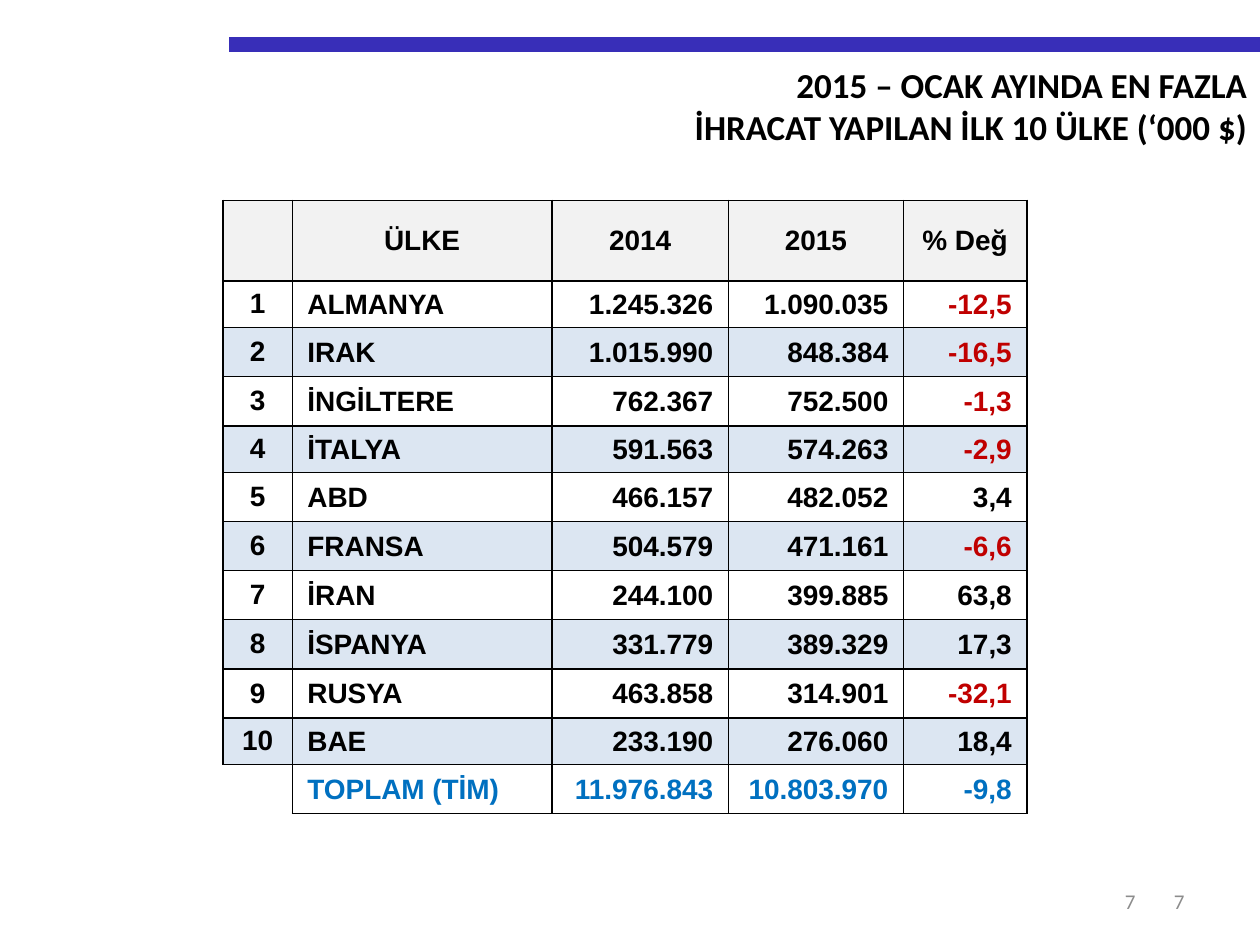
"""Build the slide listing the ten leading export countries."""
from lxml import etree
from pptx import Presentation, util as u
from pptx.dml import color
from pptx.enum import shapes, text
from pptx.oxml import ns

WIDTH, HEIGHT = 10, 7.5
BLACK, RED, BLUE, GREY = "000000", "C00000", "0070C0", "8C8C8C"
HEADER_FILL, BAND_FILL, BAR = "F2F2F2", "DCE6F2", "382EB8"
TITLE = ["2015 – OCAK AYINDA EN FAZLA", "İHRACAT YAPILAN İLK 10 ÜLKE (‘000 $)"]
HEADINGS = ["", "ÜLKE", "2014", "2015", "% Değ"]
COUNTRIES = [
    ("ALMANYA", "1.245.326", "1.090.035", "-12,5"),
    ("IRAK", "1.015.990", "848.384", "-16,5"),
    ("İNGİLTERE", "762.367", "752.500", "-1,3"),
    ("İTALYA", "591.563", "574.263", "-2,9"),
    ("ABD", "466.157", "482.052", "3,4"),
    ("FRANSA", "504.579", "471.161", "-6,6"),
    ("İRAN", "244.100", "399.885", "63,8"),
    ("İSPANYA", "331.779", "389.329", "17,3"),
    ("RUSYA", "463.858", "314.901", "-32,1"),
    ("BAE", "233.190", "276.060", "18,4"),
]
TOTAL = ["", "TOPLAM (TİM)", "11.976.843", "10.803.970", "-9,8"]
COLUMNS = [0.55, 2.06, 1.4, 1.39, 0.98]
HEADER_ROW, ROW, SHORT_ROW = 0.64, 0.39, 0.37
SHORT_ROWS = (1, 4, 10)
CENTRE, LEFT, RIGHT = text.PP_ALIGN.CENTER, text.PP_ALIGN.LEFT, text.PP_ALIGN.RIGHT


def rgb(value):
    """Return the colour for a hex string."""
    return color.RGBColor.from_string(value)


def style(para, name, size, shade, align, bold=False):
    """Set the font and alignment of a paragraph."""
    para.alignment = align
    para.font.name, para.font.size, para.font.bold = name, u.Pt(size), bold
    para.font.color.rgb = rgb(shade)


def add_bar(page, left, top, right):
    """Draw the coloured rule above the title."""
    ends = [u.Inches(value) for value in (left, top, right, top)]
    bar = page.shapes.add_connector(shapes.MSO_CONNECTOR.STRAIGHT, *ends)
    bar.line.color.rgb, bar.line.width = rgb(BAR), u.Pt(8.5)
    etree.SubElement(bar.line._get_or_add_ln().getparent(), ns.qn("a:effectLst"))


def fill_title(page, left, top, width, height):
    """Place the two-line title in its placeholder."""
    title = page.shapes.title
    title.left, title.top = u.Inches(left), u.Inches(top)
    title.width, title.height = u.Inches(width), u.Inches(height)
    frame = title.text_frame
    frame.text = "\n".join(TITLE)
    frame.vertical_anchor = text.MSO_ANCHOR.TOP
    frame.auto_size = text.MSO_AUTO_SIZE.NONE
    for para in frame.paragraphs:
        style(para, "Calibri", 20, BLACK, RIGHT, True)


def add_page_number(page, left, top, width, height):
    """Write the page number at the right of a footer box."""
    box = page.shapes.add_textbox(*map(u.Inches, (left, top, width, height)))
    frame = box.text_frame
    frame.word_wrap, frame.vertical_anchor = True, text.MSO_ANCHOR.MIDDLE
    frame.text = "7"
    style(frame.paragraphs[0], "Calibri", 12, GREY, RIGHT)


def set_borders(cell, visible):
    """Draw the named sides of a cell in black and hide the others."""
    props = cell._tc.get_or_add_tcPr()
    for index, side in enumerate("LRTB"):
        line = etree.Element(ns.qn(f"a:ln{side}"), w=str(u.Pt(1)))
        if side in visible:
            solid = etree.SubElement(line, ns.qn("a:solidFill"))
            etree.SubElement(solid, ns.qn("a:srgbClr"), val=BLACK)
        else:
            etree.SubElement(line, ns.qn("a:noFill"))
        props.insert(index, line)


def fill_cell(cell, value, shade, align, fill, visible):
    """Write and format one table cell."""
    cell.text = value
    cell.vertical_anchor = text.MSO_ANCHOR.MIDDLE
    if align == CENTRE:
        margins = (0.1, 0.05, 0.1, 0.05)
    else:
        margins = (0.12, 0.01, 0.01, 0) if align == LEFT else (0.01, 0.01, 0.12, 0)
    (cell.margin_left, cell.margin_top,
     cell.margin_right, cell.margin_bottom) = map(u.Inches, margins)
    style(cell.text_frame.paragraphs[0], "Arial", 16, shade, align, True)
    if fill:
        cell.fill.solid()
        cell.fill.fore_color.rgb = rgb(fill)
    else:
        cell.fill.background()
    set_borders(cell, visible)


def add_countries(page, left, top):
    """Build the table of countries with its heading and total rows."""
    ranked = [(str(rank), *country) for rank, country in enumerate(COUNTRIES, 1)]
    rows = [HEADINGS, *ranked, TOTAL]
    last = len(rows) - 1
    heights = [HEADER_ROW] + [SHORT_ROW if row in SHORT_ROWS else ROW
                              for row in range(1, len(rows))]
    area = map(u.Inches, (left, top, sum(COLUMNS), sum(heights)))
    table = page.shapes.add_table(len(rows), len(COLUMNS), *area).table
    table.first_row = table.horz_banding = False
    for column, width in zip(table.columns, COLUMNS):
        column.width = u.Inches(width)
    for row, values in enumerate(rows):
        table.rows[row].height = u.Inches(heights[row])
        banded = row % 2 == 0 and row < last
        fill = HEADER_FILL if row == 0 else BAND_FILL if banded else None
        for column, value in enumerate(values):
            align = CENTRE if row == 0 or column == 0 else LEFT if column == 1 else RIGHT
            shade = BLUE if row == last else RED if value.startswith("-") else BLACK
            visible = "RT" if row == last and column == 0 else "LRTB"
            fill_cell(table.cell(row, column), value, shade, align, fill, visible)


def main():
    """Assemble and save the deck."""
    deck = Presentation()
    deck.slide_width, deck.slide_height = u.Inches(WIDTH), u.Inches(HEIGHT)
    page = deck.slides.add_slide(deck.slide_layouts[5])
    add_bar(page, 1.82, 0.35, WIDTH)
    fill_title(page, 1.06, 0.45, 8.94, 0.77)
    add_countries(page, 1.77, 1.59)
    for left, width in ((7.17, 2.33), (7.01, 2.1)):
        add_page_number(page, left, 6.95, width, 0.4)
    deck.save("out.pptx")


if __name__ == "__main__":
    main()
